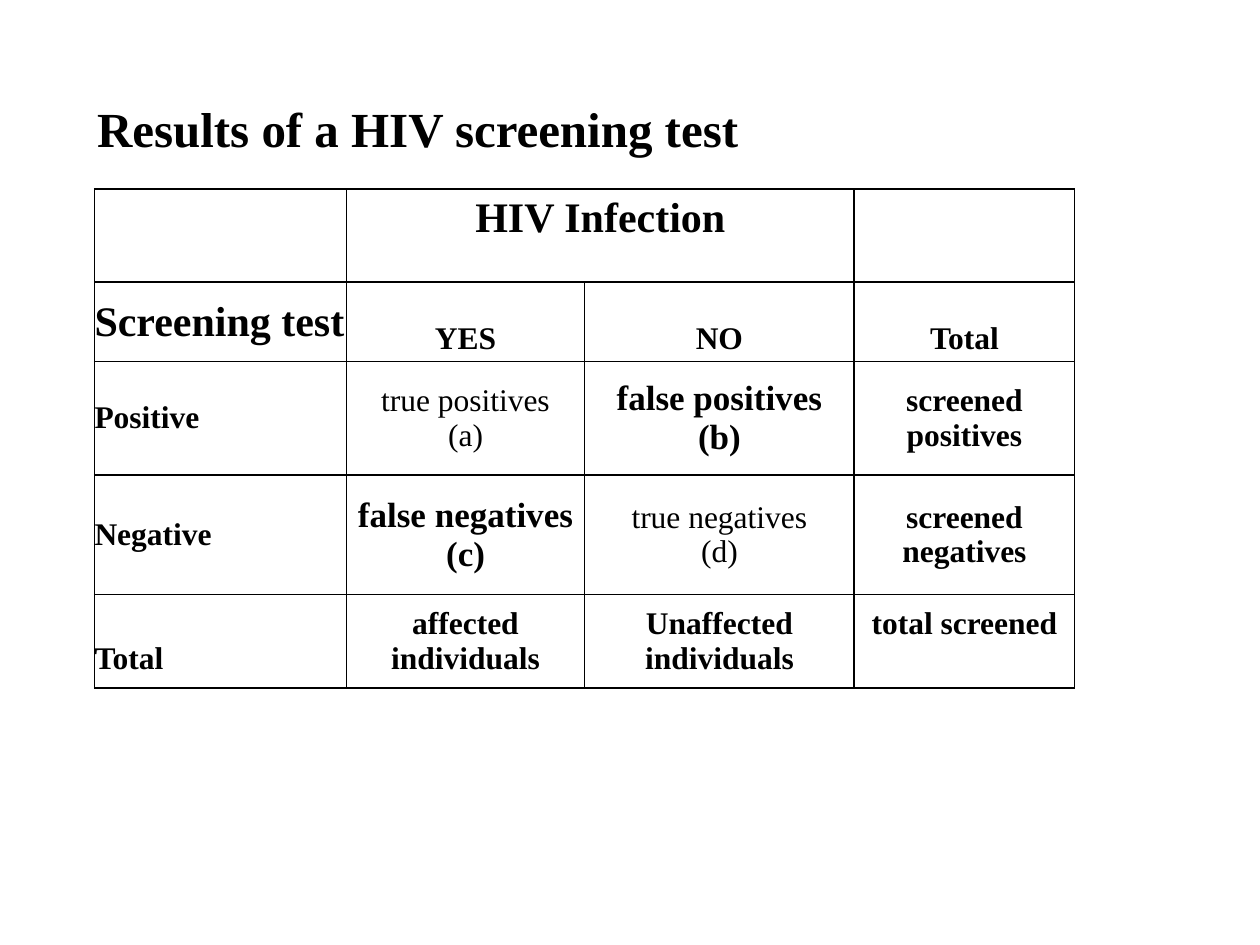
from lxml import etree
from pptx import Presentation, util as u
from pptx.dml.color import RGBColor
from pptx.enum import text
from pptx.oxml.ns import qn

BLACK = RGBColor(0, 0, 0)
FONT = "Times New Roman"
LEFT, CENTER = text.PP_ALIGN.LEFT, text.PP_ALIGN.CENTER
TOP, MIDDLE, BOTTOM = (text.MSO_ANCHOR.TOP, text.MSO_ANCHOR.MIDDLE,
                       text.MSO_ANCHOR.BOTTOM)

COLUMN_WIDTHS = [2, 1.89, 2.14, 1.75]
ROW_HEIGHTS = [0.74, 0.63, 0.9, 0.95, 0.74]

# Each cell: lines, size, bold, anchor, vertical inset
EMPTY = ([], 18, True, MIDDLE, 0)


def label(*lines, size=18, bold=True, anchor=MIDDLE, inset=0):
    return lines, size, bold, anchor, inset


def heading(word):
    return label(word, anchor=BOTTOM, inset=0.04)


RESULTS = [
    [EMPTY, label("HIV Infection", size=24, anchor=TOP, inset=0.05),
     EMPTY, EMPTY],
    [label("Screening test", size=24), heading("YES"), heading("NO"),
     heading("Total")],
    [label("Positive"), label("true positives", "(a)", bold=False),
     label("false positives", "(b)", size=20), label("screened positives")],
    [label("Negative"), label("false negatives", "(c)", size=20),
     label("true negatives", "(d)", bold=False), label("screened negatives")],
    [label("Total", anchor=BOTTOM, inset=0.09), label("affected individuals"),
     label("Unaffected individuals"),
     label("total screened", anchor=TOP, inset=0.09)],
]


def write(frame, lines, size, bold, align):
    for i, line in enumerate(lines):
        paragraph = frame.add_paragraph() if i else frame.paragraphs[0]
        paragraph.alignment = align
        run = paragraph.add_run()
        run.text = line
        font = run.font
        font.name, font.size, font.bold = FONT, u.Pt(size), bold
        font.color.rgb = BLACK


def add_borders(cell, width=1):
    properties = cell._tc.get_or_add_tcPr()
    for i, side in enumerate(("lnL", "lnR", "lnT", "lnB")):
        line = etree.Element(qn(f"a:{side}"), w=str(u.Pt(width)))
        fill = etree.SubElement(line, qn("a:solidFill"))
        etree.SubElement(fill, qn("a:srgbClr"), val=str(BLACK))
        properties.insert(i, line)


def add_title(slide, left, top, width, height):
    title = slide.shapes.title
    title.left, title.top = u.Inches(left), u.Inches(top)
    title.width, title.height = u.Inches(width), u.Inches(height)
    frame = title.text_frame
    frame.auto_size = text.MSO_AUTO_SIZE.NONE
    frame.word_wrap = True
    frame.vertical_anchor = BOTTOM
    frame.margin_left = u.Inches(0.19)
    frame.margin_right = frame.margin_top = frame.margin_bottom = 0
    write(frame, ["Results of a HIV screening test"], 28, True, LEFT)


def add_results_table(slide, left, top):
    table = slide.shapes.add_table(
        len(ROW_HEIGHTS), len(COLUMN_WIDTHS), u.Inches(left), u.Inches(top),
        u.Inches(sum(COLUMN_WIDTHS)), u.Inches(sum(ROW_HEIGHTS))).table
    table.first_row = table.horz_banding = False
    for column, width in zip(table.columns, COLUMN_WIDTHS):
        column.width = u.Inches(width)
    for row, height in zip(table.rows, ROW_HEIGHTS):
        row.height = u.Inches(height)
    table.cell(0, 1).merge(table.cell(0, 2))

    for r, row in enumerate(RESULTS):
        for c, (lines, size, bold, anchor, inset) in enumerate(row):
            cell = table.cell(r, c)
            cell.fill.background()
            add_borders(cell)
            cell.vertical_anchor = anchor
            cell.margin_left = cell.margin_right = 0
            cell.margin_top = cell.margin_bottom = u.Inches(inset)
            write(cell.text_frame, lines, size, bold, CENTER if c else LEFT)


def main():
    deck = Presentation()
    deck.slide_width, deck.slide_height = u.Inches(10), u.Inches(7.5)
    slide = deck.slides.add_slide(deck.slide_layouts[5])
    add_title(slide, 0.58, 0.58, 8.83, 0.67)
    add_results_table(slide, 0.75, 1.5)
    deck.save("out.pptx")


if __name__ == "__main__":
    main()
